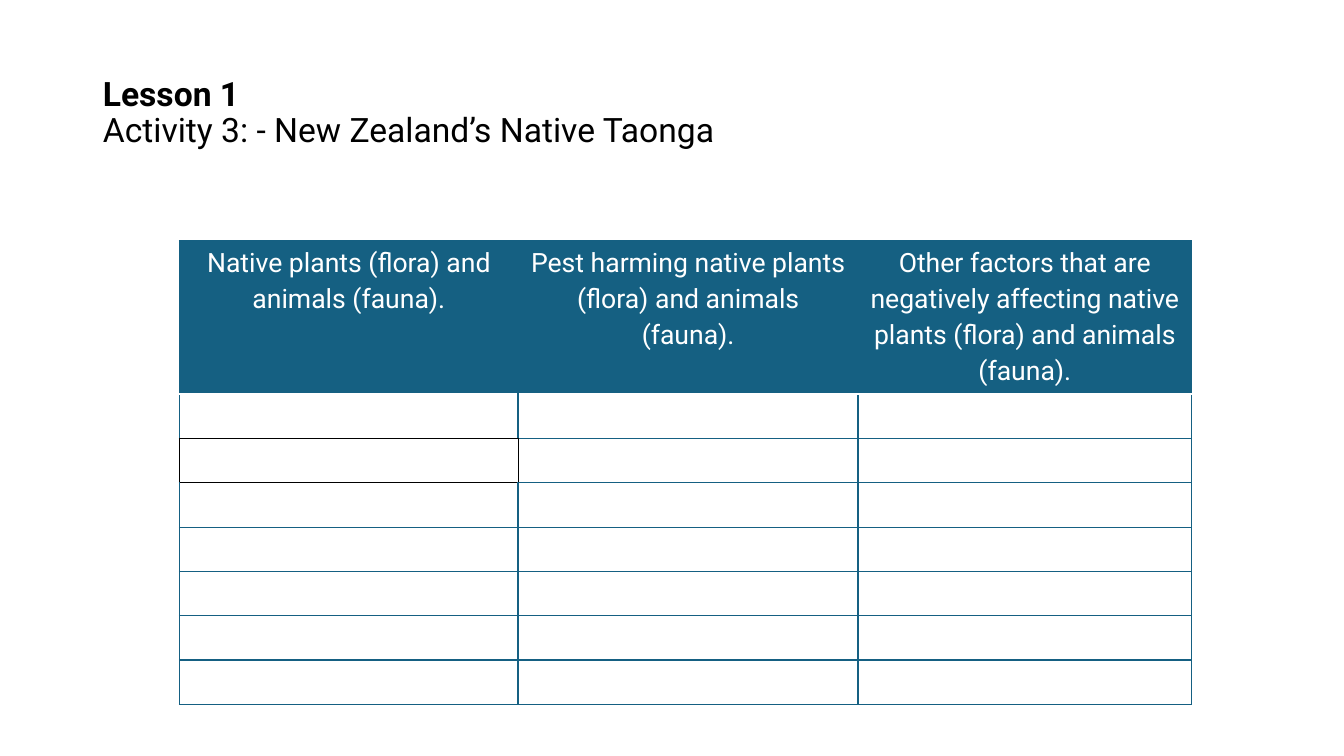
from pptx import Presentation
from pptx.dml.color import RGBColor
from pptx.enum import text
from pptx.oxml import parse_xml
from pptx.oxml.ns import nsdecls
from pptx.util import Inches, Pt

FONT = "Roboto"
TEAL, BLACK, WHITE = "156082", "000000", "FFFFFF"
HEADINGS = [
    "Native plants (flora) and animals (fauna).",
    "Pest harming native plants (flora) and animals (fauna).",
    "Other factors that are negatively affecting native plants (flora) and animals (fauna).",
]
COLUMN_WIDTHS = [3.36, 3.37, 3.31]
ROW_HEIGHTS = [1.52] + [0.44] * 7
BLACK_CELL = (2, 0)
NEIGHBOURS = {"L": (0, -1), "R": (0, 1), "T": (-1, 0), "B": (1, 0)}


def rgb(color):
    return RGBColor.from_string(color)


def style_font(font, size, color, bold=False):
    font.name, font.size, font.bold = FONT, Pt(size), bold
    font.color.rgb = rgb(color)


def border_style(row, column, side):
    """Return the colour and width in points of one side of a cell."""
    down, across = NEIGHBOURS[side]
    neighbour = (row + down, column + across)
    if BLACK_CELL in ((row, column), neighbour):
        return BLACK, 1
    if row == 0 and side == "B" or row == 1 and side == "T" and column > 0:
        return WHITE, 1.5
    if row > 0 and column == 0 and side == "R":
        return TEAL, 1.5
    return TEAL, 1


def add_border(cell, side, color, width):
    cell._tc.get_or_add_tcPr().append(parse_xml(
        f'<a:ln{side} {nsdecls("a")} w="{int(Pt(width))}"><a:solidFill>'
        f'<a:srgbClr val="{color}"/></a:solidFill></a:ln{side}>'))


def fill_title(page):
    title = page.shapes.title
    title.left, title.top = Inches(0.92), Inches(0.4)
    title.width, title.height = Inches(11.5), Inches(1.45)
    frame = title.text_frame
    frame.word_wrap = True
    frame.vertical_anchor = text.MSO_ANCHOR.MIDDLE
    para = frame.paragraphs[0]
    para.alignment = text.PP_ALIGN.LEFT
    para.line_spacing = 0.9
    lesson = para.add_run()
    lesson.text = "Lesson 1"
    style_font(lesson.font, 24, BLACK, bold=True)
    para.add_line_break()
    activity = para.add_run()
    activity.text = "Activity 3: - New Zealand’s Native Taonga"
    style_font(activity.font, 24, BLACK)


def write_heading(cell, heading):
    cell.margin_left = cell.margin_right = Inches(0.12)
    cell.margin_top, cell.margin_bottom = Inches(0.02), 0
    para = cell.text_frame.paragraphs[0]
    para.text = heading
    para.alignment = text.PP_ALIGN.CENTER
    para.line_spacing = 1.15
    para.space_after = Pt(8)
    style_font(para.font, 19, WHITE)


def add_worksheet(page):
    table = page.shapes.add_table(
        len(ROW_HEIGHTS), len(COLUMN_WIDTHS), Inches(1.78), Inches(2.39),
        Inches(sum(COLUMN_WIDTHS)), Inches(sum(ROW_HEIGHTS))).table
    table.first_row = table.horz_banding = False
    for column, width in zip(table.columns, COLUMN_WIDTHS):
        column.width = Inches(width)
    for row, height in zip(table.rows, ROW_HEIGHTS):
        row.height = Inches(height)

    # Borders come before the fill in the cell properties
    for row in range(len(ROW_HEIGHTS)):
        for column in range(len(COLUMN_WIDTHS)):
            cell = table.cell(row, column)
            for side in NEIGHBOURS:
                add_border(cell, side, *border_style(row, column, side))
            cell.fill.solid()
            cell.fill.fore_color.rgb = rgb(WHITE if row else TEAL)

    # Column headings
    for column, heading in enumerate(HEADINGS):
        write_heading(table.cell(0, column), heading)


def main():
    deck = Presentation()
    deck.slide_width, deck.slide_height = Inches(13.33), Inches(7.5)
    page = deck.slides.add_slide(deck.slide_layouts[5])
    fill_title(page)
    add_worksheet(page)
    deck.save("out.pptx")


if __name__ == "__main__":
    main()
